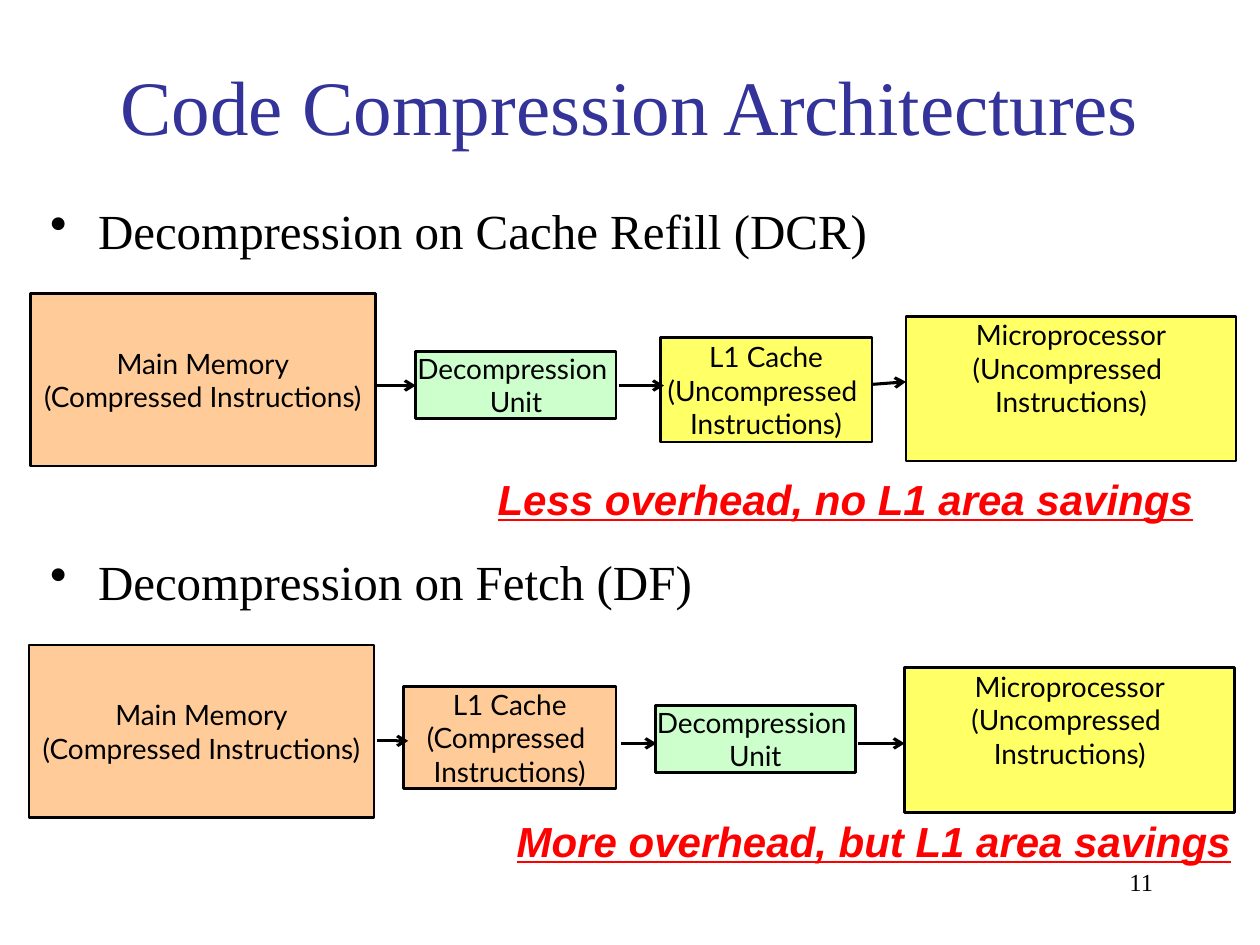
from pptx import Presentation
from pptx.dml.color import RGBColor
from pptx.enum.shapes import MSO_CONNECTOR, MSO_SHAPE
from pptx.enum.text import MSO_ANCHOR, PP_ALIGN
from pptx.oxml.ns import qn
from pptx.util import Inches, Pt
from lxml.etree import SubElement

BLACK = RGBColor(0x00, 0x00, 0x00)
NAVY = RGBColor(0x33, 0x33, 0x99)
RED = RGBColor(0xFF, 0x00, 0x00)
PEACH = RGBColor(0xFF, 0xCC, 0x99)
GREEN = RGBColor(0xCC, 0xFF, 0xCC)
YELLOW = RGBColor(0xFF, 0xFF, 0x66)
SERIF, SANS, LABEL = "Times New Roman", "Arial", "Lato"


class Deck:
    """Draws styled elements on a grid of 100 columns by 75 rows."""

    def __init__(self):
        self.show = Presentation()
        self.show.slide_width, self.show.slide_height = Inches(10), Inches(7.5)
        self.slide = self.show.slides.add_slide(self.show.slide_layouts[6])
        self.col = self.show.slide_width / 100
        self.row = self.show.slide_height / 75

    def grid(self, x, y):
        return round(x * self.col), round(y * self.row)

    def label(self, shape, text, face, size, color=BLACK, align=PP_ALIGN.CENTER):
        frame = shape.text_frame
        frame.text = text
        for para in frame.paragraphs:
            para.alignment = align
            for run in para.runs:
                run.font.name, run.font.size = face, Pt(size)
                run.font.color.rgb = color
        return frame

    def text(self, x, y, wide, high, text, face, size, color=BLACK, align=PP_ALIGN.CENTER):
        shape = self.slide.shapes.add_textbox(*self.grid(x, y), *self.grid(wide, high))
        frame = self.label(shape, text, face, size, color, align)
        frame.word_wrap = True
        return frame

    def title(self, text):
        frame = self.text(7.5, 4.1, 85, 8.4, text, SERIF, 44, NAVY)
        frame.vertical_anchor = MSO_ANCHOR.MIDDLE

    def bullet(self, y, text):
        frame = self.text(3, y, 85.6, 7, text, SERIF, 28, align=PP_ALIGN.LEFT)
        props = frame.paragraphs[0]._p.get_or_add_pPr()
        dent = Inches(0.38)
        props.set("marL", str(dent))
        props.set("indent", str(-dent))
        SubElement(props, qn("a:buChar")).set("char", "•")

    def note(self, x, y, wide, text):
        frame = self.text(x, y, wide, 5, text, SANS, 24, RED)
        frame.word_wrap = False
        font = frame.paragraphs[0].runs[0].font
        font.bold = font.italic = font.underline = True

    def box(self, x, y, wide, high, text, fill):
        shape = self.slide.shapes.add_shape(
            MSO_SHAPE.RECTANGLE, *self.grid(x, y), *self.grid(wide, high))
        shape.shadow.inherit = False
        shape.fill.solid()
        shape.fill.fore_color.rgb = fill
        shape.line.color.rgb, shape.line.width = BLACK, Pt(1.5)
        frame = self.label(shape, text, LABEL, 16)
        frame.word_wrap = False
        frame.vertical_anchor = MSO_ANCHOR.MIDDLE
        return frame

    def arrow(self, x, y, tox, toy):
        link = self.slide.shapes.add_connector(
            MSO_CONNECTOR.STRAIGHT, *self.grid(x, y), *self.grid(tox, toy))
        link.line.color.rgb, link.line.width = BLACK, Pt(1.75)
        SubElement(link.line._get_or_add_ln(), qn("a:tailEnd")).set("type", "arrow")
        SubElement(link._element.spPr, qn("a:effectLst"))

    def flow(self, x, y, head, unit, cache, links):
        self.bullet(y - 7.9, head)
        self.box(x, y, 27.4, 13.7, "Main Memory\n(Compressed Instructions)", PEACH)
        chip = self.box(x + 69.5, y + 1.8, 26.2, 11.5,
                        "Microprocessor\n(Uncompressed \nInstructions)", YELLOW)
        chip.vertical_anchor = MSO_ANCHOR.TOP
        chip.margin_top = Inches(0.01)
        self.box(*unit, 15.9, 5.3, "Decompression \nUnit", GREEN)
        self.box(*cache)
        for link in links:
            self.arrow(*link)


def main():
    deck = Deck()
    deck.title("Code Compression Architectures")
    deck.flow(2.4, 23.3, "Decompression on Cache Refill (DCR)", (33, 27.9),
              (52.4, 26.8, 16.8, 8.3, "L1 Cache\n(Uncompressed \nInstructions)", YELLOW),
              [(29.9, 30.6, 33, 30.6), (49.1, 30.6, 52.7, 30.6), (69.3, 30.5, 71.9, 30.3)])
    deck.flow(2.3, 51.2, "Decompression on Fetch (DF)", (52, 56),
              (32, 54.5, 16.9, 8.1, "L1 Cache\n(Compressed \nInstructions)", PEACH),
              [(29.9, 58.8, 32.4, 58.8), (49.3, 59, 52.1, 59), (68.1, 59, 71.8, 59)])
    deck.note(37.8, 37.1, 58.6, "Less overhead, no L1 area savings")
    deck.note(39.3, 64.2, 60.1, "More overhead, but L1 area savings")
    deck.text(71.7, 68.3, 20.8, 5, "11", SERIF, 14, align=PP_ALIGN.RIGHT)
    deck.show.save("out.pptx")


if __name__ == "__main__":
    main()
